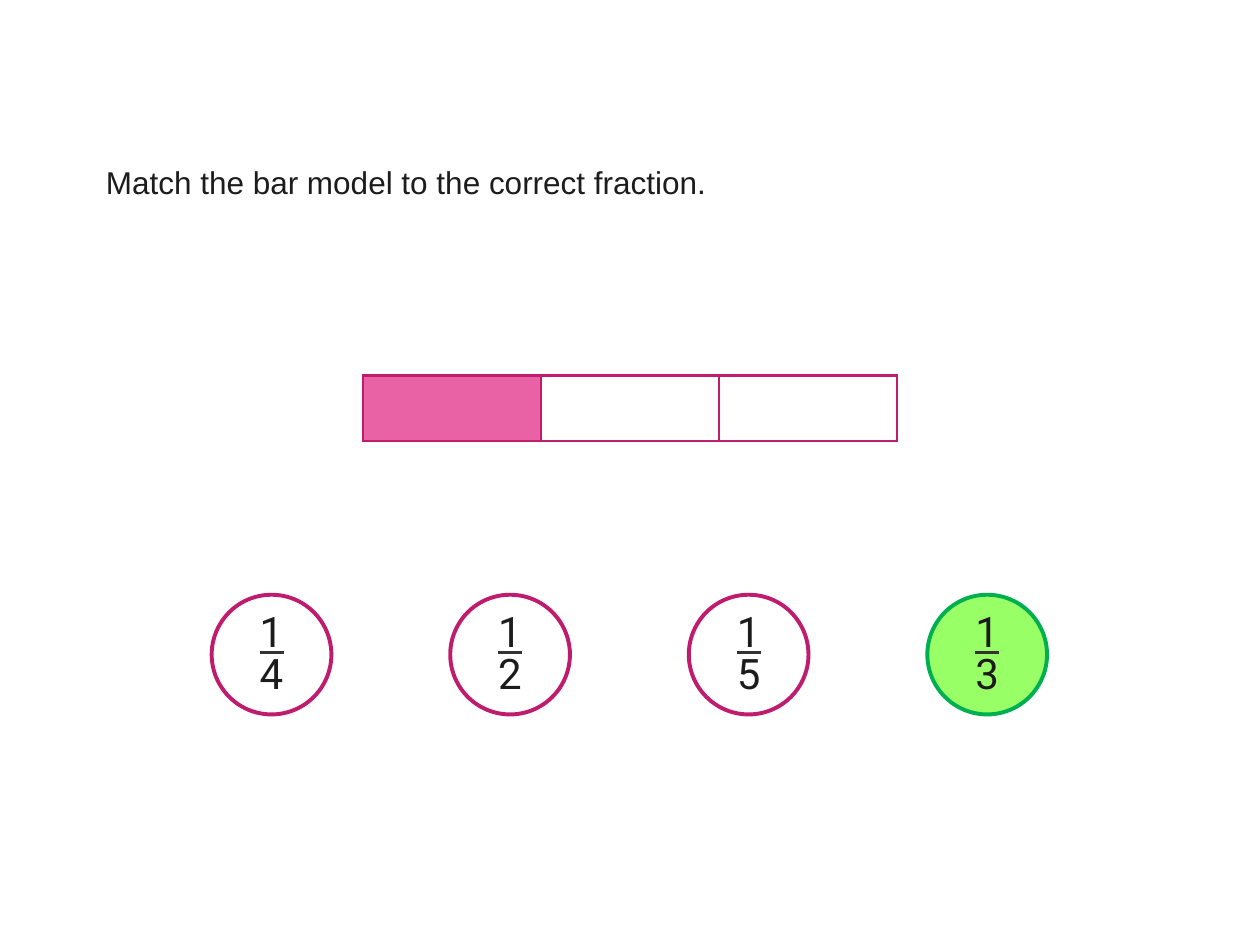
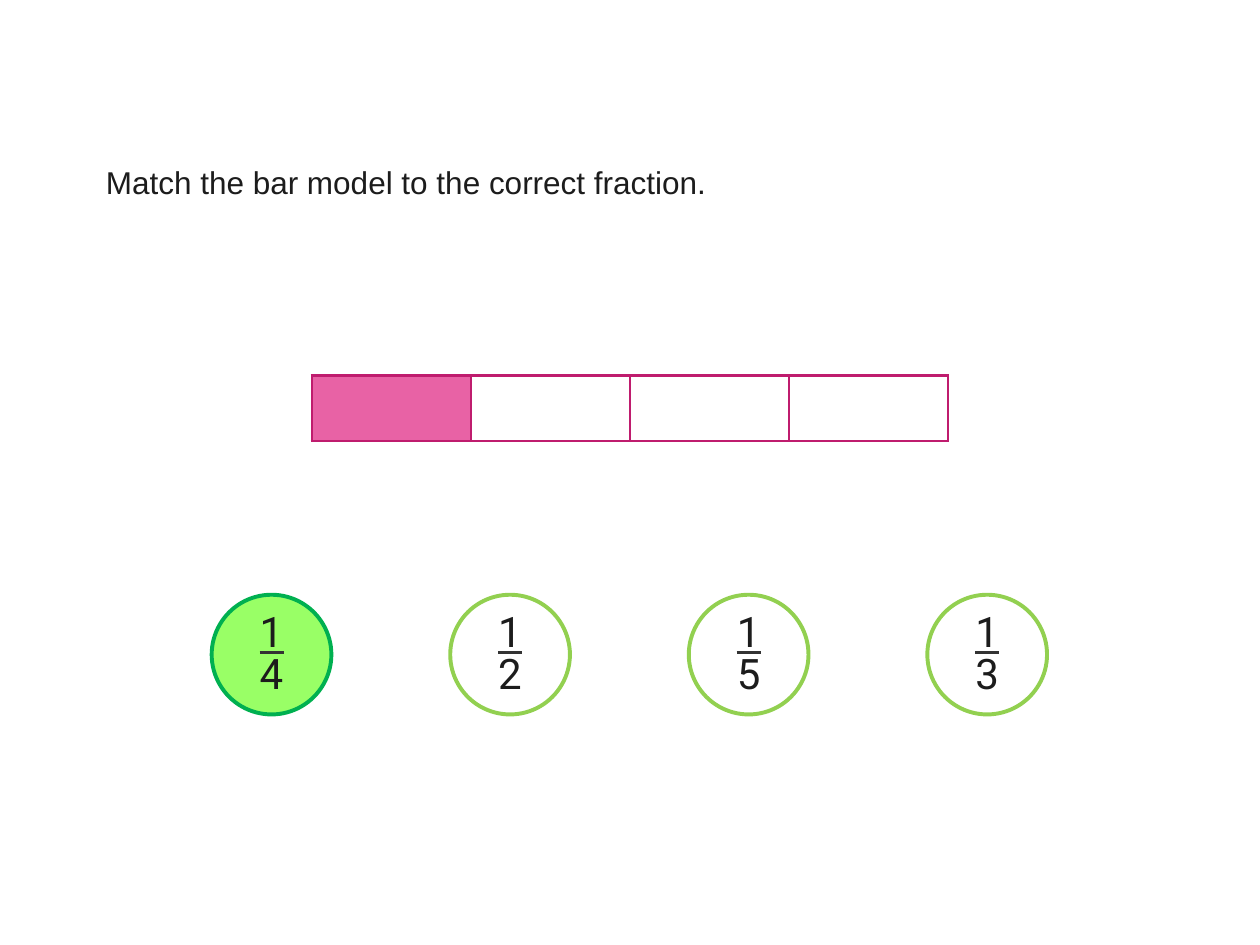
from lxml import etree
from pptx import Presentation
from pptx import util as u
from pptx.dml.color import RGBColor
from pptx.enum import shapes, text
from pptx.oxml import ns

Inches, Pt = u.Inches, u.Pt

INK = RGBColor(0x1C, 0x1C, 0x1C)
FRACTION_LINE = RGBColor(0x33, 0x33, 0x33)
WHITE = RGBColor(0xFF, 0xFF, 0xFF)
PINK = RGBColor(0xE8, 0x62, 0xA5)
MAGENTA = RGBColor(0xBF, 0x1C, 0x6E)
LIME = RGBColor(0x92, 0xD0, 0x50)
ANSWER_FILL = RGBColor(0x99, 0xFF, 0x66)
ANSWER_LINE = RGBColor(0x00, 0xB0, 0x50)

PROMPT = "Match the bar model to the correct fraction."
DENOMINATORS = (4, 2, 5, 3)
SLIDE_WIDTH, SLIDE_HEIGHT = 10, 7.5
BAR_TOP, BAR_HEIGHT = 2.98, 0.52
ANSWER_BOX = (1.68, 4.72, 6.63, 0.95)

# parts of the bar, bar width, outline of the wrong answers
QUESTIONS = (
    (3, 4.24, MAGENTA),
    (4, 5.05, LIME),
)


def clear_margins(frame):
    frame.margin_left = frame.margin_top = 0
    frame.margin_right = frame.margin_bottom = 0
    frame.vertical_anchor = text.MSO_ANCHOR.TOP
    frame.auto_size = text.MSO_AUTO_SIZE.NONE
    frame.word_wrap = True


def format_paragraph(paragraph, font_name, size, alignment):
    paragraph.alignment = alignment
    for run in paragraph.runs:
        run.font.name = font_name
        run.font.size = Pt(size)
        run.font.color.rgb = INK


def add_prompt(slide, left, top, width, height):
    title = slide.shapes.title
    title.left, title.top = Inches(left), Inches(top)
    title.width, title.height = Inches(width), Inches(height)
    frame = title.text_frame
    clear_margins(frame)
    frame.text = PROMPT
    format_paragraph(frame.paragraphs[0], "Arial", 18, text.PP_ALIGN.LEFT)


def set_cell_borders(cell, color, weight):
    properties = cell._tc.get_or_add_tcPr()
    for side in ("a:lnL", "a:lnR", "a:lnT", "a:lnB"):
        line = etree.SubElement(properties, ns.qn(side), w=str(Pt(weight)))
        fill = etree.SubElement(line, ns.qn("a:solidFill"))
        etree.SubElement(fill, ns.qn("a:srgbClr"), val=str(color))


def add_bar_model(slide, left, top, width, height, parts):
    """Draw a bar of equal parts with the first one shaded."""
    frame = slide.shapes.add_table(
        1, parts, Inches(left), Inches(top), Inches(width), Inches(height))
    table = frame.table
    table.first_row = table.horz_banding = False
    for index, column in enumerate(table.columns):
        column.width = Inches(width / parts)
        cell = table.cell(0, index)
        set_cell_borders(cell, MAGENTA, 1.5)
        cell.fill.solid()
        cell.fill.fore_color.rgb = WHITE if index else PINK


def add_fraction_circle(slide, left, top, diameter, denominator, fill, outline):
    group = slide.shapes.add_group_shape()
    circle = group.shapes.add_shape(
        shapes.MSO_SHAPE.OVAL, Inches(left), Inches(top),
        Inches(diameter), Inches(diameter))
    circle.shadow.inherit = False
    circle.fill.solid()
    circle.fill.fore_color.rgb = fill
    circle.line.color.rgb = outline
    circle.line.width = Pt(2.25)

    center = left + diameter / 2
    label_width = 0.34
    label = group.shapes.add_textbox(
        Inches(center - label_width / 2), Inches(top + 0.15),
        Inches(label_width), Inches(0.67))
    clear_margins(label.text_frame)
    label.text_frame.text = f"1\n{denominator}"
    for paragraph in label.text_frame.paragraphs:
        paragraph.line_spacing = Pt(24)
        format_paragraph(paragraph, "Roboto", 24, text.PP_ALIGN.CENTER)

    line_width, line_top = 0.19, top + 0.46
    line = group.shapes.add_connector(
        shapes.MSO_CONNECTOR.STRAIGHT,
        Inches(center - line_width / 2), Inches(line_top),
        Inches(center + line_width / 2), Inches(line_top))
    line.line.color.rgb = FRACTION_LINE
    line.line.width = Pt(1.75)
    etree.SubElement(line._element.spPr, ns.qn("a:effectLst"))


def add_answers(slide, left, top, width, height, correct, outline):
    """Spread the fraction circles evenly and highlight the correct one."""
    pitch = (width - height) / (len(DENOMINATORS) - 1)
    for index, denominator in enumerate(DENOMINATORS):
        if denominator == correct:
            colors = ANSWER_FILL, ANSWER_LINE
        else:
            colors = WHITE, outline
        add_fraction_circle(
            slide, left + index * pitch, top, height, denominator, *colors)


def add_question(presentation, parts, bar_width, outline):
    slide = presentation.slides.add_slide(presentation.slide_layouts[5])
    add_prompt(slide, 0.84, 1.29, 5.58, 0.3)
    bar_left = (SLIDE_WIDTH - bar_width) / 2
    add_bar_model(slide, bar_left, BAR_TOP, bar_width, BAR_HEIGHT, parts)
    add_answers(slide, *ANSWER_BOX, correct=parts, outline=outline)


def main():
    presentation = Presentation()
    presentation.slide_width = Inches(SLIDE_WIDTH)
    presentation.slide_height = Inches(SLIDE_HEIGHT)
    for question in QUESTIONS:
        add_question(presentation, *question)
    presentation.save("out.pptx")


if __name__ == "__main__":
    main()
